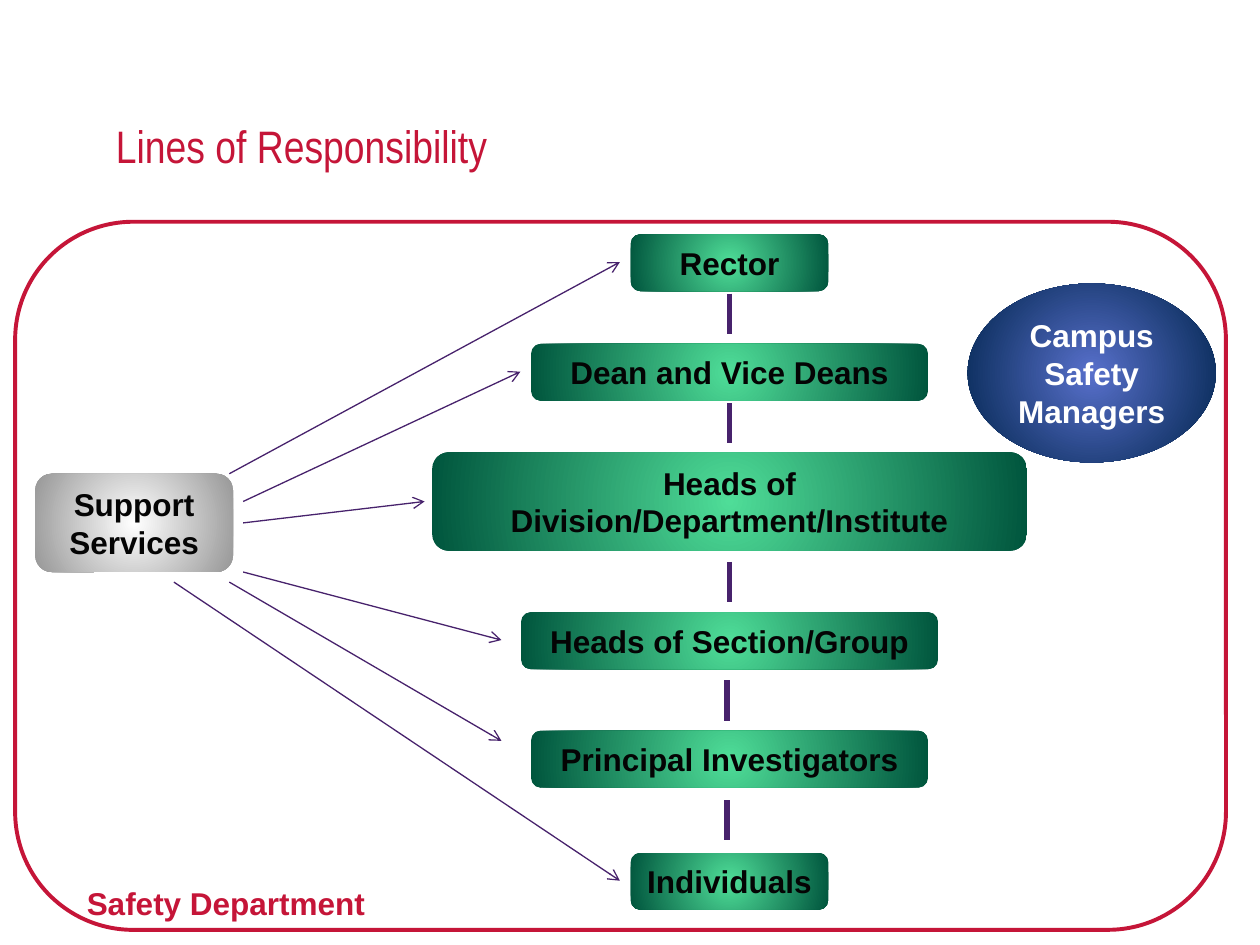
from lxml import etree
from pptx import Presentation, util as u
from pptx.dml.color import RGBColor
from pptx.enum import shapes, text
from pptx.oxml import ns

RED = RGBColor(0xC5, 0x15, 0x38)
PURPLE = RGBColor(0x47, 0x22, 0x6C)
BLACK = RGBColor(0x04, 0x04, 0x04)
WHITE = RGBColor(0xFF, 0xFF, 0xFF)
GREENS = RGBColor(0x4F, 0xDD, 0x98), RGBColor(0x00, 0x55, 0x3D)
GREYS = WHITE, RGBColor(0x97, 0x97, 0x97)
BLUES = RGBColor(0x58, 0x70, 0xCB), RGBColor(0x00, 0x24, 0x4C)

ROUNDED = shapes.MSO_SHAPE.ROUNDED_RECTANGLE
CHAIN_CENTRE = 5.79
LOW, TALL = 0.45, 0.78

# Levels of the chain: label, top, width, height
LEVELS = [
    ("Rector", 1.86, 1.57, LOW),
    ("Dean and Vice Deans", 2.73, 3.15, LOW),
    ("Heads of Division/Department/Institute", 3.59, 4.72, TALL),
    ("Heads of Section/Group", 4.86, 3.31, LOW),
    ("Principal Investigators", 5.8, 3.15, LOW),
    ("Individuals", 6.77, 1.57, LOW),
]
# Short links between levels: x, top
LINKS = [(CHAIN_CENTRE, 2.33), (CHAIN_CENTRE, 3.2), (CHAIN_CENTRE, 4.46),
         (5.77, 5.4), (5.77, 6.35)]
LINK_LENGTH = 0.32
# Support arrows: start x, start y, end x, end y
ARROWS = [
    (1.82, 3.76, 4.92, 2.08),
    (1.93, 3.98, 4.13, 2.95),
    (1.93, 4.15, 3.37, 3.98),
    (1.93, 4.54, 3.98, 5.08),
    (1.82, 4.62, 3.98, 5.88),
    (1.38, 4.62, 4.92, 6.99),
]


def inches(*lengths):
    return [u.Inches(length) for length in lengths]


def write(shape, words, size=18, font="Arial", color=BLACK, bold=True,
          align=text.PP_ALIGN.CENTER, anchor=text.MSO_ANCHOR.MIDDLE):
    frame = shape.text_frame
    frame.word_wrap = True
    frame.auto_size = text.MSO_AUTO_SIZE.NONE
    frame.vertical_anchor = anchor
    paragraph = frame.paragraphs[0]
    paragraph.alignment = align
    run = paragraph.add_run()
    run.text = words
    run.font.size = u.Pt(size)
    run.font.name = font
    run.font.bold = bold
    run.font.color.rgb = color


def fill_radial(shape, colors):
    """Fill from the first colour at the centre to the second at the edge."""
    shape.fill.gradient()
    for stop, color, position in zip(shape.fill.gradient_stops, colors, (0, 1)):
        stop.color.rgb = color
        stop.position = position
    gradient = shape._element.spPr.find(ns.qn("a:gradFill"))
    gradient.remove(gradient.find(ns.qn("a:lin")))
    circle = etree.SubElement(gradient, ns.qn("a:path"), path="circle")
    etree.SubElement(circle, ns.qn("a:fillToRect"),
                     {side: "50000" for side in "ltrb"})


def add_node(slide, words, box, colors, kind=ROUNDED, color=BLACK):
    shape = slide.shapes.add_shape(kind, *inches(*box))
    shape.shadow.inherit = False
    shape.line.fill.background()
    fill_radial(shape, colors)
    write(shape, words, color=color)


def add_line(slide, points, width, arrow=False):
    line = slide.shapes.add_connector(shapes.MSO_CONNECTOR.STRAIGHT,
                                      *inches(*points))
    line.line.color.rgb = PURPLE
    line.line.width = u.Pt(width)
    if arrow:
        etree.SubElement(line.line._get_or_add_ln(), ns.qn("a:tailEnd"),
                         type="arrow")
    etree.SubElement(line._element.spPr, ns.qn("a:effectLst"))


def add_title(slide, words):
    title = slide.shapes.title
    title.left, title.top, title.width, title.height = inches(0.92, 0.67, 8.25, 0.7)
    frame = title.text_frame
    frame.margin_left = frame.margin_top = 0
    frame.margin_right = frame.margin_bottom = 0
    write(title, words, size=26, font="Arial Narrow", color=RED, bold=False,
          align=text.PP_ALIGN.LEFT, anchor=text.MSO_ANCHOR.BOTTOM)


def add_frame(slide):
    frame = slide.shapes.add_shape(ROUNDED, *inches(0.12, 1.76, 9.61, 5.62))
    frame.shadow.inherit = False
    frame.fill.background()
    frame.line.color.rgb = RED
    frame.line.width = u.Pt(2.25)


def main():
    presentation = Presentation()
    presentation.slide_width, presentation.slide_height = inches(10, 7.5)
    slide = presentation.slides.add_slide(presentation.slide_layouts[5])
    add_title(slide, "Lines of Responsibility")

    # Chain of responsibility
    for words, top, width, height in LEVELS:
        box = (CHAIN_CENTRE - width / 2, top, width, height)
        add_node(slide, words, box, GREENS)
    for x, top in LINKS:
        add_line(slide, (x, top, x, top + LINK_LENGTH), 3)

    # Support services and their arrows, inside the department frame
    add_node(slide, "Support Services", (0.28, 3.76, 1.57, TALL), GREYS)
    add_frame(slide)
    for points in ARROWS:
        add_line(slide, points, 0.75, arrow=True)
    label = slide.shapes.add_textbox(*inches(0.59, 6.97, 2.91, 0.4))
    write(label, "Safety Department", color=RED, align=text.PP_ALIGN.LEFT,
          anchor=text.MSO_ANCHOR.TOP)

    # Campus managers
    add_node(slide, "Campus Safety Managers", (7.68, 2.25, 1.97, 1.42), BLUES,
             kind=shapes.MSO_SHAPE.OVAL, color=WHITE)

    presentation.save("out.pptx")


if __name__ == "__main__":
    main()
